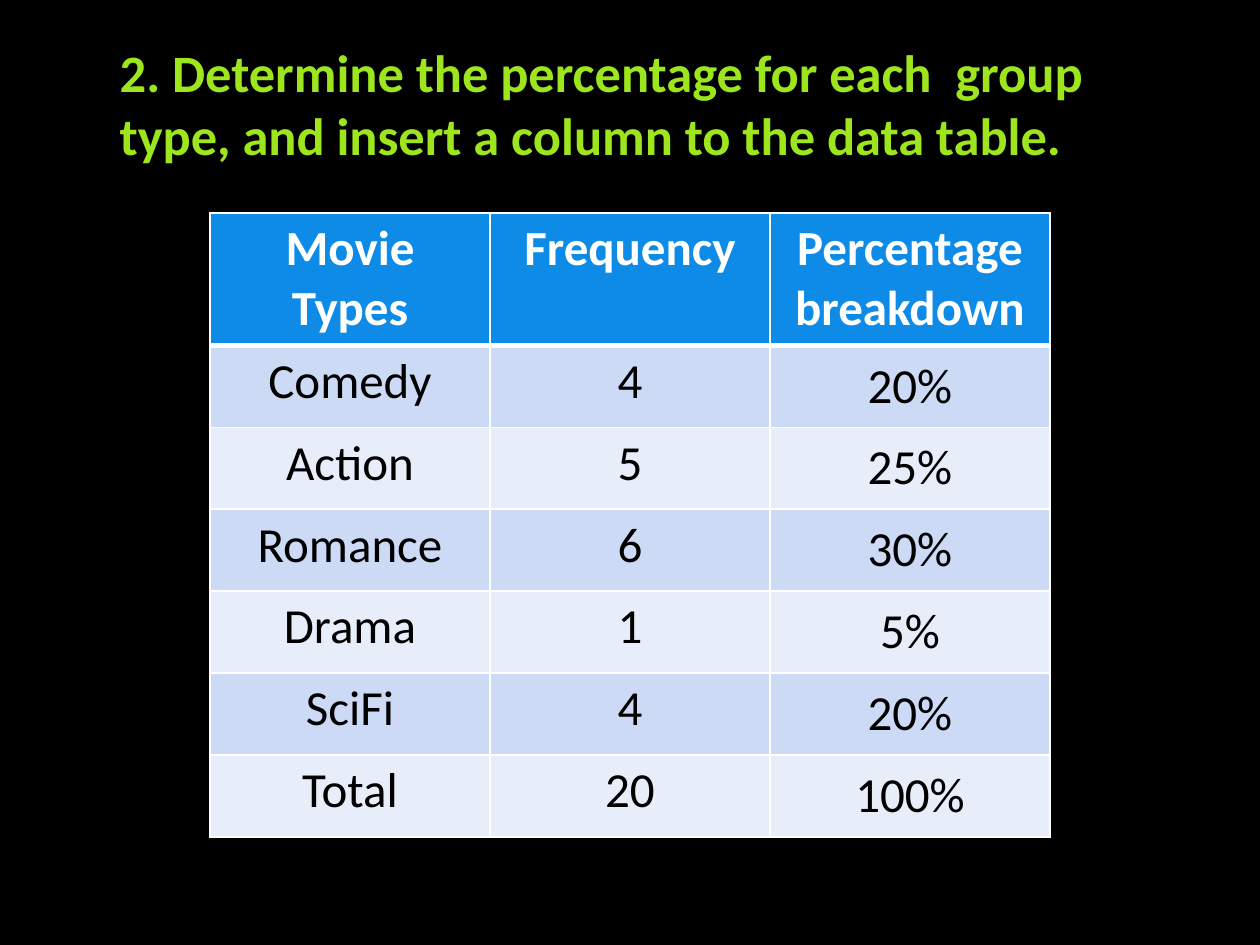
import pptx
import pptx.util
import pptx.dml.color
import pptx.enum.text
import pptx.oxml
import pptx.oxml.ns
from lxml import etree

RGBColor = pptx.dml.color.RGBColor
Inches = pptx.util.Inches
Pt = pptx.util.Pt
ALIGN = pptx.enum.text.PP_ALIGN
ANCHOR = pptx.enum.text.MSO_ANCHOR

BLACK = RGBColor(0x00, 0x00, 0x00)
WHITE = RGBColor(0xFF, 0xFF, 0xFF)
LIME = RGBColor(0x9D, 0xE6, 0x1E)
BLUE = RGBColor(0x0D, 0x8B, 0xE6)
BANDS = [RGBColor(0xCC, 0xDA, 0xF5), RGBColor(0xE7, 0xEE, 0xFA)]

INSTRUCTION = "2. Determine the percentage for each  group type, and insert a column to the data table."
HEADINGS = ["Movie Types", "Frequency", "Percentage breakdown"]
MOVIES = [
    ("Comedy", "4", "20%"),
    ("Action", "5", "25%"),
    ("Romance", "6", "30%"),
    ("Drama", "1", "5%"),
    ("SciFi", "4", "20%"),
    ("Total", "20", "100%"),
]
WIDTH, HEIGHT = Inches(10), Inches(7.5)
HEADER_HEIGHT, ROW_HEIGHT = Inches(1.05), Inches(0.65)


def write(frame, text, size=28, color=BLACK, bold=False, align=ALIGN.CENTER):
    paragraph = frame.paragraphs[0]
    paragraph.text = text
    paragraph.alignment = align
    paragraph.space_before = Pt(0)
    font = paragraph.runs[0].font
    font.name = "Calibri"
    font.size = Pt(size)
    font.bold = bold
    font.color.rgb = color
    return paragraph


def add_borders(cell, bottom):
    properties = cell._tc.get_or_add_tcPr()
    widths = {"lnL": 1, "lnR": 1, "lnT": 1, "lnB": bottom}
    for position, (tag, width) in enumerate(widths.items()):
        line = etree.Element(pptx.oxml.ns.qn(f"a:{tag}"), w=str(Pt(width)))
        fill = etree.SubElement(line, pptx.oxml.ns.qn("a:solidFill"))
        etree.SubElement(fill, pptx.oxml.ns.qn("a:srgbClr"), val=str(WHITE))
        properties.insert(position, line)


def add_instruction(slide):
    body = slide.placeholders[1]
    body.left, body.top = Inches(0.85), Inches(0.27)
    body.width, body.height = Inches(8.29), Inches(5.94)
    paragraph = body.text_frame.paragraphs[0]
    properties = paragraph._p.get_or_add_pPr()
    properties.set("marL", "0")
    properties.set("indent", "0")
    etree.SubElement(properties, pptx.oxml.ns.qn("a:buNone"))
    write(body.text_frame, INSTRUCTION, size=30, color=LIME, bold=True, align=ALIGN.LEFT)


def add_breakdown(slide):
    rows = [HEADINGS, *MOVIES]
    width = WIDTH * 2 // 3
    height = HEADER_HEIGHT + ROW_HEIGHT * len(MOVIES)
    breakdown = slide.shapes.add_table(
        len(rows), len(HEADINGS), (WIDTH - width) // 2, Inches(1.69), width, height
    ).table
    for r, values in enumerate(rows):
        header = r == 0
        breakdown.rows[r].height = HEADER_HEIGHT if header else ROW_HEIGHT
        for c, value in enumerate(values):
            cell = breakdown.cell(r, c)
            cell.fill.solid()
            cell.fill.fore_color.rgb = BLUE if header else BANDS[(r - 1) % 2]
            centred = not header and c == len(HEADINGS) - 1
            cell.vertical_anchor = ANCHOR.MIDDLE if centred else ANCHOR.TOP
            write(cell.text_frame, value, color=WHITE if header else BLACK, bold=header)
            add_borders(cell, bottom=3 if header else 1)


def main():
    deck = pptx.Presentation()
    deck.slide_width, deck.slide_height = WIDTH, HEIGHT
    slide = deck.slides.add_slide(deck.slide_layouts[1])
    slide.background.fill.solid()
    slide.background.fill.fore_color.rgb = BLACK
    title = slide.shapes.title.element
    title.getparent().remove(title)
    add_instruction(slide)
    add_breakdown(slide)
    deck.save("out.pptx")


if __name__ == "__main__":
    main()
